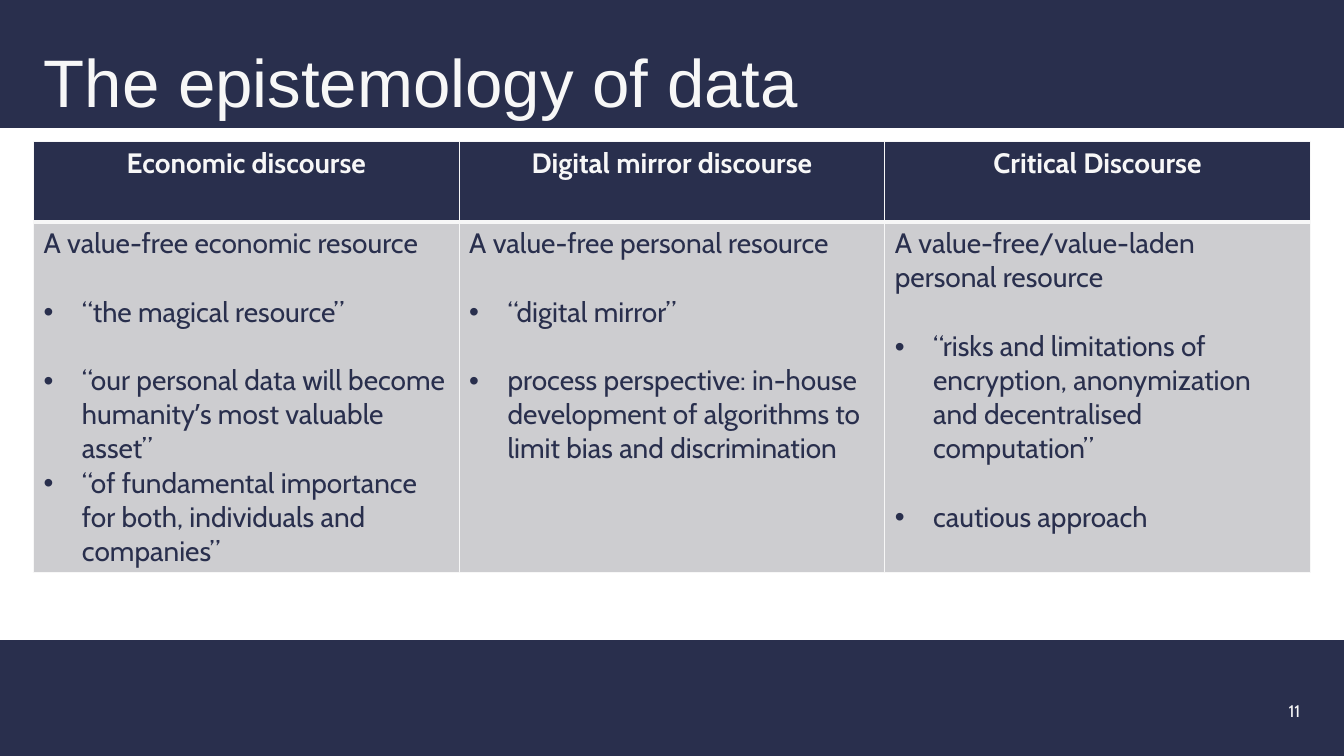
from dataclasses import dataclass

from lxml import etree
from pptx import Presentation
from pptx.dml.color import RGBColor
from pptx.enum.shapes import MSO_SHAPE
from pptx.enum.text import MSO_ANCHOR, MSO_AUTO_SIZE, PP_ALIGN
from pptx.oxml.ns import qn
from pptx.slide import Slide
from pptx.table import _Cell
from pptx.text.text import _Paragraph
from pptx.util import Inches, Pt

RECTANGLE = MSO_SHAPE.RECTANGLE
BOTTOM = MSO_ANCHOR.BOTTOM
NO_AUTOFIT = MSO_AUTO_SIZE.NONE
LEFT, CENTER, RIGHT = PP_ALIGN.LEFT, PP_ALIGN.CENTER, PP_ALIGN.RIGHT

COLORS = {"navy": "292F4D", "pale": "F7F7F7", "grey": "CDCDD0"}
TITLE_FONT, BODY_FONT = "Arial", "Cabin"

SLIDE_WIDTH, SLIDE_HEIGHT = Inches(13.33), Inches(7.5)
COLUMN = SLIDE_WIDTH / 40
ROW = SLIDE_HEIGHT / 150
HEADER_ROWS, BODY_ROWS = 16, 69.6
LINE_GAP = Pt(24.5)
BULLET_INDENT = Inches(0.38)
THIN, THICK = Pt(1), Pt(3)


@dataclass(frozen=True)
class Area:
    """A rectangle measured in grid columns and rows."""
    column: float
    row: float
    columns: float
    rows: float

    def box(self) -> tuple[int, int, int, int]:
        return (round(self.column * COLUMN), round(self.row * ROW),
                round(self.columns * COLUMN), round(self.rows * ROW))


@dataclass(frozen=True)
class Point:
    text: str
    gap_before: bool = True


@dataclass(frozen=True)
class Discourse:
    heading: str
    summary: str
    points: tuple[Point, ...]


BANDS = (Area(0, 127, 40, 23), Area(0, 0, 40, 25.4))
TITLE_AREA = Area(1, 3.8, 36.3, 21.4)
NUMBER_AREA = Area(36.9, 135.6, 2.1, 8.4)
TABLE_AREA = Area(1, 28, 38, HEADER_ROWS + BODY_ROWS)

DISCOURSES = (
    Discourse("Economic discourse", "A value-free economic resource", (
        Point("“the magical resource”"),
        Point("“our personal data will become humanityʼs most valuable asset”"),
        Point("“of fundamental importance for both, individuals and companies”",
              gap_before=False),
    )),
    Discourse("Digital mirror discourse", "A value-free personal resource", (
        Point("“digital mirror”"),
        Point("process perspective: in-house development of algorithms to "
              "limit bias and discrimination"),
    )),
    Discourse("Critical Discourse", "A value-free/value-laden personal resource", (
        Point("“risks and limitations of encryption, anonymization and "
              "decentralised computation”"),
        Point("cautious approach"),
    )),
)


def rgb(color: str) -> RGBColor:
    return RGBColor.from_string(COLORS[color])


def format_text(paragraph: _Paragraph, size: float, color: str,
                align: PP_ALIGN = LEFT, bold: bool = False,
                font: str = BODY_FONT) -> None:
    paragraph.alignment = align
    for run in paragraph.runs:
        run.font.name = font
        run.font.size = Pt(size)
        run.font.bold = bold
        run.font.color.rgb = rgb(color)


def add_bullet(paragraph: _Paragraph) -> None:
    properties = paragraph._p.get_or_add_pPr()
    properties.set("marL", str(BULLET_INDENT))
    properties.set("indent", str(-BULLET_INDENT))
    etree.SubElement(properties, qn("a:buFont"), typeface="Arial")
    etree.SubElement(properties, qn("a:buChar"), char="•")


def style_cell(cell: _Cell, fill: str, top: int, bottom: int) -> None:
    """Draw the cell's borders, then its fill."""
    properties = cell._tc.get_or_add_tcPr()
    for side, width in (("L", THIN), ("R", THIN), ("T", top), ("B", bottom)):
        line = etree.SubElement(properties, qn(f"a:ln{side}"), w=str(width))
        solid = etree.SubElement(line, qn("a:solidFill"))
        etree.SubElement(solid, qn("a:srgbClr"), val=COLORS["pale"])
    cell.fill.solid()
    cell.fill.fore_color.rgb = rgb(fill)


def add_band(slide: Slide, area: Area) -> None:
    band = slide.shapes.add_shape(RECTANGLE, *area.box())
    band.shadow.inherit = False
    band.fill.solid()
    band.fill.fore_color.rgb = rgb("navy")
    band.line.fill.background()


def add_title(slide: Slide, text: str) -> None:
    title = slide.shapes.title
    title.left, title.top, title.width, title.height = TITLE_AREA.box()
    frame = title.text_frame
    frame.text = text
    frame.auto_size = NO_AUTOFIT
    frame.vertical_anchor = BOTTOM
    frame.paragraphs[0].line_spacing = 0.9
    format_text(frame.paragraphs[0], 48, "pale", font=TITLE_FONT)


def add_slide_number(slide: Slide, number: str) -> None:
    frame = slide.shapes.add_textbox(*NUMBER_AREA.box()).text_frame
    frame.word_wrap = True
    frame.vertical_anchor = BOTTOM
    frame.text = number
    format_text(frame.paragraphs[0], 12, "pale", RIGHT)


def fill_discourse(heading: _Cell, body: _Cell, discourse: Discourse) -> None:
    style_cell(heading, "navy", THIN, THICK)
    heading.text_frame.text = discourse.heading
    format_text(heading.text_frame.paragraphs[0], 20, "pale", CENTER, bold=True)

    style_cell(body, "grey", THICK, THIN)
    body.text_frame.text = discourse.summary
    format_text(body.text_frame.paragraphs[0], 20, "navy")
    for point in discourse.points:
        paragraph = body.text_frame.add_paragraph()
        paragraph.text = point.text
        add_bullet(paragraph)
        if point.gap_before:
            paragraph.space_before = LINE_GAP
        format_text(paragraph, 20, "navy")


def add_discourse_table(slide: Slide) -> None:
    table = slide.shapes.add_table(2, len(DISCOURSES), *TABLE_AREA.box()).table
    table.horz_banding = False
    for row, rows in zip(table.rows, (HEADER_ROWS, BODY_ROWS)):
        row.height = round(rows * ROW)
    for index, discourse in enumerate(DISCOURSES):
        fill_discourse(table.cell(0, index), table.cell(1, index), discourse)


def main() -> None:
    presentation = Presentation()
    presentation.slide_width = SLIDE_WIDTH
    presentation.slide_height = SLIDE_HEIGHT
    title_only = presentation.slide_layouts[5]
    slide = presentation.slides.add_slide(title_only)

    for area in BANDS:
        add_band(slide, area)
    # The title is created with the slide, so lift it above the bands.
    slide.shapes._spTree.append(slide.shapes.title._element)
    add_title(slide, "The epistemology of data")
    add_slide_number(slide, "11")
    add_discourse_table(slide)
    presentation.save("out.pptx")


if __name__ == "__main__":
    main()
